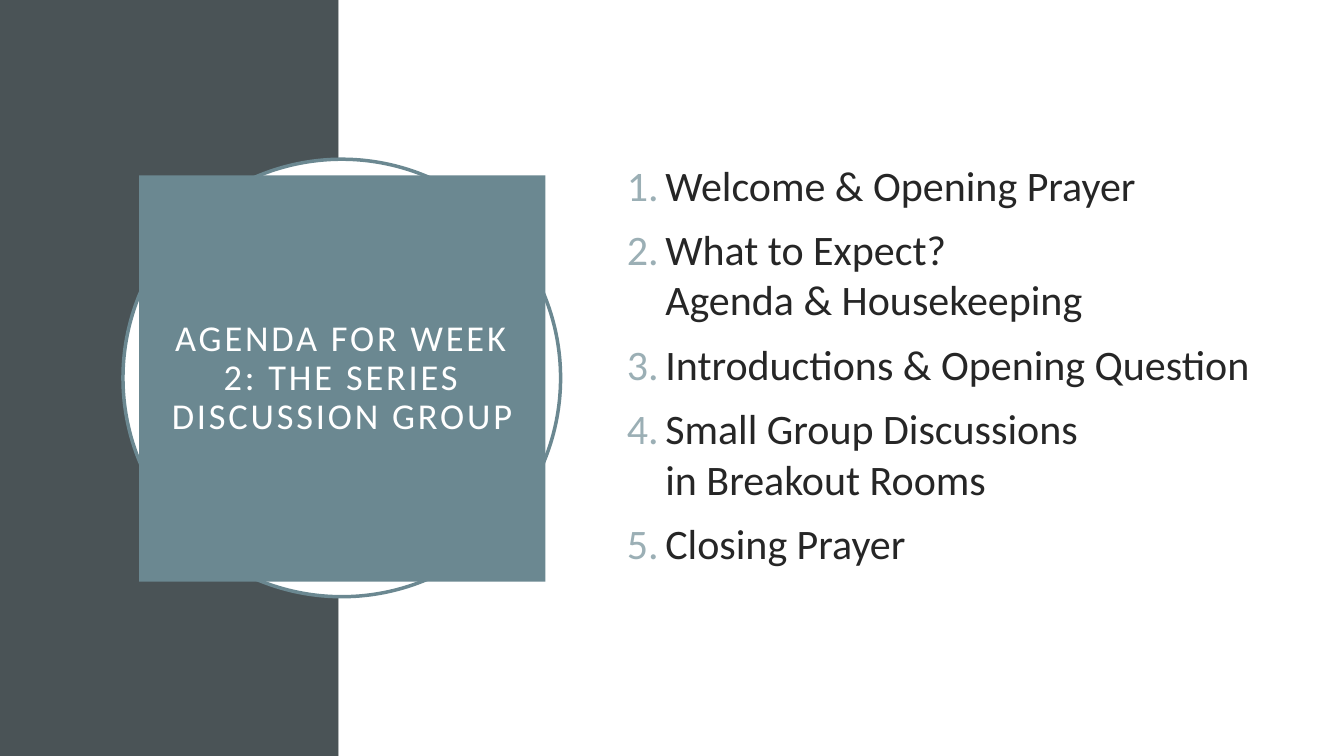
from dataclasses import dataclass

from lxml.etree import SubElement
from pptx import Presentation
from pptx.dml.color import RGBColor
from pptx.enum.shapes import MSO_SHAPE as Shape
from pptx.enum.text import MSO_ANCHOR as Anchor, MSO_AUTO_SIZE as AutoSize, PP_ALIGN as Align
from pptx.oxml.ns import qn
from pptx.util import Inches, Pt

AGENDA = [
    ["Welcome & Opening Prayer"],
    ["What to Expect?", "Agenda & Housekeeping"],
    ["Introductions & Opening Question"],
    ["Small Group Discussions", "in Breakout Rooms"],
    ["Closing Prayer"],
]


@dataclass(frozen=True)
class Theme:
    font: str = "Calibri"
    slate: str = "4A5356"
    teal: str = "6B8891"
    number: str = "9BAFB5"
    ink: str = "262626"
    white: str = "FFFFFF"
    title_size: int = 26
    agenda_size: int = 30


def set_attributes(target, values):
    for name, value in values.items():
        setattr(target, name, value)


class SlideBuilder:
    def __init__(self, slide, theme):
        self.slide = slide
        self.theme = theme

    def place(self, shape, box):
        names = ("left", "top", "width", "height")
        set_attributes(shape, dict(zip(names, map(Inches, box))))

    def fill(self, shape, color):
        shape.fill.solid()
        shape.fill.fore_color.rgb = RGBColor.from_string(color)

    def style_run(self, run, size, color):
        set_attributes(run.font, {"name": self.theme.font, "size": Pt(size)})
        run.font.color.rgb = RGBColor.from_string(color)

    def panel(self, kind, box, color, outline=None):
        shape = self.slide.shapes.add_shape(kind, *map(Inches, box))
        shape.shadow.inherit = False
        self.fill(shape, color)
        if outline:
            shape.line.color.rgb = RGBColor.from_string(outline)
            shape.line.width = Pt(2.5)
        else:
            shape.line.fill.background()

    def title(self, text, box):
        """Format the title placeholder and bring it in front of the panels."""
        shape = self.slide.shapes.title
        self.place(shape, box)
        self.fill(shape, self.theme.teal)
        frame = shape.text_frame
        margins = ("margin_left", "margin_top", "margin_right", "margin_bottom")
        set_attributes(frame, dict.fromkeys(margins, Inches(0.2)))
        set_attributes(frame, {"word_wrap": True, "auto_size": AutoSize.NONE,
                               "vertical_anchor": Anchor.MIDDLE})
        paragraph = frame.paragraphs[0]
        set_attributes(paragraph, {"alignment": Align.CENTER, "line_spacing": 0.9})
        run = paragraph.add_run()
        run.text = text
        self.style_run(run, self.theme.title_size, self.theme.white)
        run.font._element.set("spc", "200")
        self.slide.shapes._spTree.append(shape._element)

    def number(self, paragraph):
        """Give the paragraph an automatic number with a hanging indent."""
        properties = paragraph._p.get_or_add_pPr()
        indent = Inches(0.38)
        properties.set("marL", str(indent))
        properties.set("indent", str(-indent))
        color = SubElement(properties, qn("a:buClr"))
        SubElement(color, qn("a:srgbClr"), val=self.theme.number)
        SubElement(properties, qn("a:buFont"), typeface=self.theme.font)
        SubElement(properties, qn("a:buAutoNum"), type="arabicPeriod")

    def numbered_list(self, items, box):
        frame = self.slide.shapes.add_textbox(*map(Inches, box)).text_frame
        set_attributes(frame, {"word_wrap": True, "vertical_anchor": Anchor.TOP})
        for index, lines in enumerate(items):
            paragraph = frame.add_paragraph() if index else frame.paragraphs[0]
            self.number(paragraph)
            if index:
                paragraph.space_before = Pt(10)
            for position, line in enumerate(lines):
                if position:
                    paragraph.add_line_break()
                run = paragraph.add_run()
                run.text = line
                self.style_run(run, self.theme.agenda_size, self.theme.ink)


def main():
    presentation = Presentation()
    set_attributes(presentation, {"slide_width": Inches(13.33), "slide_height": Inches(7.5)})
    theme = Theme()
    slide = presentation.slides.add_slide(presentation.slide_layouts.get_by_name("Title Only"))
    builder = SlideBuilder(slide, theme)

    builder.panel(Shape.RECTANGLE, (0, 0, 3.36, 7.5), theme.slate)
    builder.panel(Shape.RECTANGLE, (3.36, 0, 9.97, 7.5), theme.white)
    builder.panel(Shape.OVAL, (1.22, 1.58, 4.34, 4.34), theme.white, theme.teal)
    builder.title("AGENDA FOR WEEK 2: THE SERIES DISCUSSION GROUP", (1.38, 1.74, 4.03, 4.03))
    builder.numbered_list(AGENDA, (6.12, 1.53, 6.59, 4.43))
    presentation.save("out.pptx")


if __name__ == "__main__":
    main()
